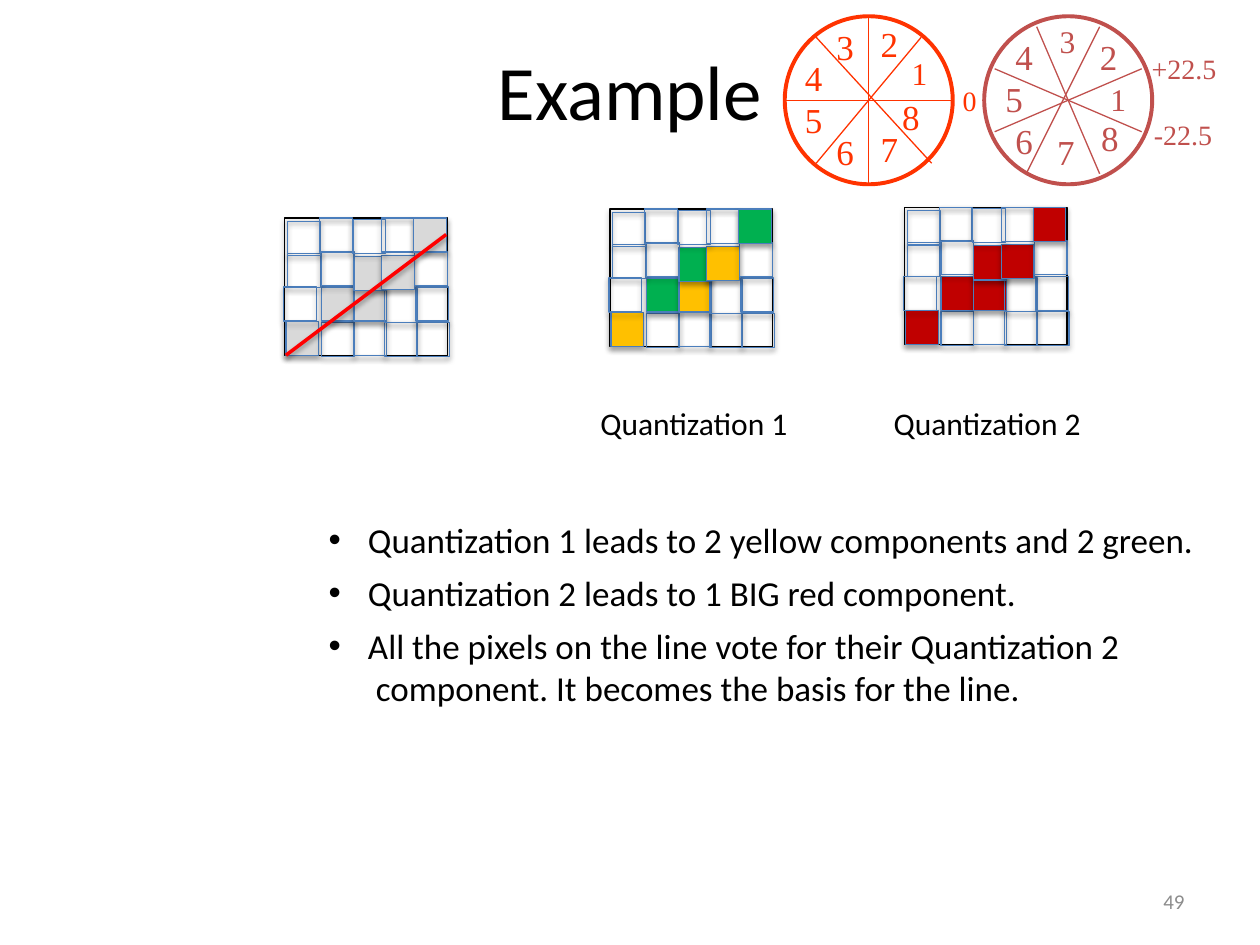
import pptx
import pptx.dml.color
import pptx.enum.shapes
import pptx.enum.text
import pptx.oxml
import pptx.oxml.ns
import pptx.util

Pt = pptx.util.Pt
SHAPES = pptx.enum.shapes.MSO_SHAPE
ALIGN = pptx.enum.text.PP_ALIGN
ANCHOR = pptx.enum.text.MSO_ANCHOR
NS = pptx.oxml.ns.nsdecls("a")

BLACK, ORANGE, BRICK = "000000", "FF3300", "C0504D"
GRAY, GREEN, YELLOW, RED = "D9D9D9", "00B050", "FFC000", "C00000"
CELL_SIZE = (18.7, 19.5)
CELL_OFFSETS = [
    [(0.7, 59), (21, 59.6), (39.6, 59), (57.2, 59.6), (75.4, 59.6)],
    [(-0.5, 39.4), (21, 39.4), (39.6, 39.4), (57.2, 40.2), (75, 39.4)],
    [(1.7, 20.2), (21, 19), (39.6, 22), (55.4, 21.4), (74.2, 19)],
    [(1.7, 2), (20, 0), (39, 0.8), (55.4, 0), (73.6, 0)],
]
WHEEL_SIZE = 96
DIGIT_BOXES = {20: (24.5, 31), 18: (23.8, 28.8)}


def rgb(color):
    """Turn a hex string into a colour."""
    return pptx.dml.color.RGBColor.from_string(color)


def shadow_effect(alpha, blur, distance):
    """Return an effect list with one downward black shadow."""
    return pptx.oxml.parse_xml(
        f'<a:effectLst {NS}><a:outerShdw blurRad="{Pt(blur)}" dist="{Pt(distance)}" '
        f'dir="5400000" rotWithShape="0"><a:srgbClr val="000000">'
        f'<a:alpha val="{alpha * 1000}"/></a:srgbClr></a:outerShdw></a:effectLst>'
    )


def add_outline(slide, kind, box, color, width, fill=None, shadowed=False):
    """Add an outlined shape, hollow unless a fill is given."""
    outline = slide.shapes.add_shape(kind, *map(Pt, box))
    if fill:
        outline.fill.solid()
        outline.fill.fore_color.rgb = rgb(fill)
    else:
        outline.fill.background()
    outline.line.color.rgb = rgb(color)
    outline.line.width = Pt(width)
    if shadowed:
        outline._element.spPr.append(shadow_effect(35, 3.1, 1.8))
    else:
        outline.shadow.inherit = False


def add_line(slide, ends, color, width, shadowed=False):
    """Add a straight line between two points."""
    line = slide.shapes.add_connector(
        pptx.enum.shapes.MSO_CONNECTOR.STRAIGHT, *map(Pt, ends))
    line.line.color.rgb = rgb(color)
    line.line.width = Pt(width)
    effect = shadow_effect(38, 3.1, 1.6) if shadowed else pptx.oxml.parse_xml(f"<a:effectLst {NS}/>")
    line._element.spPr.append(effect)


def format_text(frame, font, size, color):
    """Give every run of a text frame one font, size and colour."""
    for paragraph in frame.paragraphs:
        for run in paragraph.runs:
            run.font.name = font
            run.font.size = Pt(size)
            run.font.color.rgb = rgb(color)


def add_label(slide, box, text, font, size, color):
    """Add unwrapped text in a box and return its frame."""
    frame = slide.shapes.add_textbox(*map(Pt, box)).text_frame
    frame.text = text
    frame.word_wrap = False
    frame.auto_size = pptx.enum.text.MSO_AUTO_SIZE.SHAPE_TO_FIT_TEXT
    format_text(frame, font, size, color)
    return frame


def add_pixel_grid(slide, box, fills):
    """Draw a framed pixel grid; fills maps (row from bottom, column) to a colour."""
    left, top, _, _ = box
    add_outline(slide, SHAPES.RECTANGLE, box, BLACK, 0.75, shadowed=True)
    for row, offsets in enumerate(CELL_OFFSETS):
        for column, (dx, dy) in enumerate(offsets):
            add_outline(slide, SHAPES.RECTANGLE, (left + dx, top + dy, *CELL_SIZE),
                        "4B7EBC", 0.75, fills.get((row, column)), True)


def add_wheel(slide, box, color, spokes, digits, small_digits):
    """Draw a direction wheel with spokes and sector numbers."""
    left, top, _, _ = box
    add_outline(slide, SHAPES.OVAL, box, color, 2.25)
    for x1, y1, x2, y2 in spokes:
        add_line(slide, (left + x1, top + y1, left + x2, top + y2), color, 0.75)
    for number, (dx, dy) in enumerate(digits, start=1):
        size = 18 if number in small_digits else 20
        add_label(slide, (left + dx, top + dy, *DIGIT_BOXES[size]), str(number),
                  "Times New Roman", size, color)


def add_findings(slide, box):
    """Write the bulleted findings below the grids."""
    findings = [
        "Quantization 1 leads to 2 yellow components and 2 green.",
        "Quantization 2 leads to 1 BIG red component.",
        "All the pixels on the line vote for their Quantization 2",
        "component. It becomes the basis for the line.",
    ]
    frame = add_label(slide, box, "\n".join(findings), "Calibri", 20, BLACK)
    *bullets, continuation = frame.paragraphs
    for paragraph in bullets:
        properties = paragraph._p.get_or_add_pPr()
        properties.set("marL", str(Pt(22.5)))
        properties.set("indent", str(-Pt(22.5)))
        properties.append(pptx.oxml.parse_xml(f'<a:buFont {NS} typeface="Arial"/>'))
        properties.append(pptx.oxml.parse_xml(f'<a:buChar {NS} char="•"/>'))
    for paragraph in bullets[:2]:
        paragraph.space_after = Pt(6)
    continuation._p.get_or_add_pPr().set("marL", str(Pt(27)))


def add_title(slide, box):
    """Place and format the slide title."""
    title = slide.shapes.title
    title.left, title.top, title.width, title.height = map(Pt, box)
    title.text_frame.text = "Example"
    title.text_frame.vertical_anchor = ANCHOR.MIDDLE
    title.text_frame.paragraphs[0].alignment = ALIGN.CENTER
    format_text(title.text_frame, "Calibri", 44, BLACK)


def add_page_number(slide, box):
    """Write the page number at the lower right."""
    frame = slide.shapes.add_textbox(*map(Pt, box)).text_frame
    frame.text = "49"
    frame.word_wrap = True
    frame.vertical_anchor = ANCHOR.MIDDLE
    frame.paragraphs[0].alignment = ALIGN.RIGHT
    format_text(frame, "Calibri", 12, "8C8C8C")


def main():
    """Build the slide and save it."""
    deck = pptx.Presentation()
    deck.slide_width, deck.slide_height = Pt(720), Pt(540)
    slide = deck.slides.add_slide(deck.slide_layouts[5])
    add_title(slide, (36, 6, 648, 90))
    add_page_number(slide, (516, 500.5, 168, 28.75))

    rising = [(0, 0), (1, 1), (1, 2), (2, 2), (2, 3), (3, 4)]
    two_colors = [YELLOW, GREEN, YELLOW, GREEN, YELLOW, GREEN]
    grid_size = (92.9, 78.5)
    add_pixel_grid(slide, (162.7, 124.6, *grid_size), dict.fromkeys(rising, GRAY))
    add_pixel_grid(slide, (348.5, 119.5, *grid_size), dict(zip(rising, two_colors)))
    add_pixel_grid(slide, (516.8, 118.5, *grid_size), dict.fromkeys(rising, RED))
    add_line(slide, (163.4, 203, 255, 134), "FF0000", 2, shadowed=True)

    for left, caption in ((336, "Quantization 1"), (503.6, "Quantization 2")):
        add_label(slide, (left, 227.5, 121.3, 29), caption, "Calibri", 18, BLACK)
    add_findings(slide, (180.7, 293, 513.4, 116.6))

    add_wheel(slide, (448.4, 9.3, WHEEL_SIZE, WHEEL_SIZE), ORANGE,
              [(0, 48, 96, 48), (48, 0, 48, 96), (18, 84, 78, 12), (18, 12, 84, 84)],
              [(65.5, 18), (47.7, 0), (22.5, 1.5), (4.5, 19.5),
               (4.5, 43.5), (22.5, 61.5), (47.7, 60), (60, 42)], {1})
    add_wheel(slide, (562.4, 9.3, WHEEL_SIZE, WHEEL_SIZE), BRICK,
              [(90, 30, 6, 66), (6, 30, 90, 66), (30, 6, 66, 90), (66, 6, 24, 90)],
              [(65, 33), (59, 7.5), (36, 0), (10.8, 7.5),
               (5, 31.2), (10.8, 55.5), (34.6, 61.5), (59.8, 54)], {1, 3})
    for box, angle, color in (
        ((652.3, 63.5, 47.5, 26.6), "-22.5", BRICK),
        ((651, 26, 51.8, 26.6), "+22.5", BRICK),
        ((543, 44, 22.3, 26.6), "0", ORANGE),
    ):
        add_label(slide, box, angle, "Times New Roman", 16, color)
    deck.save("out.pptx")


if __name__ == "__main__":
    main()
